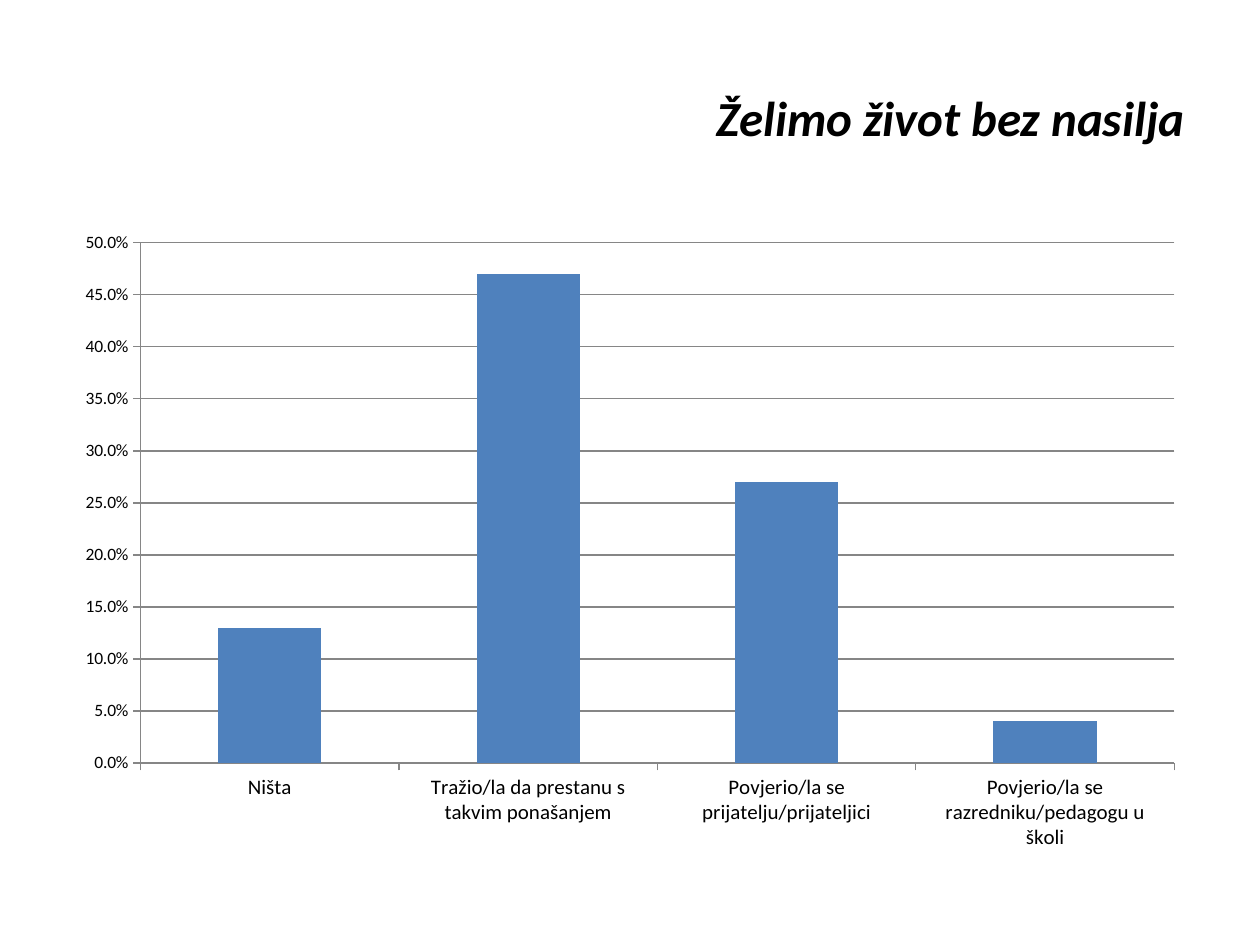
from pptx import Presentation
from pptx.chart.data import CategoryChartData
from pptx.dml.color import RGBColor
from pptx.enum.chart import XL_CHART_TYPE, XL_TICK_MARK
from pptx.enum.text import MSO_ANCHOR, PP_ALIGN
from pptx.util import Cm, Pt

FONT = "Calibri"
BLACK, GREY, BLUE = "000000", "868686", "4F81BD"
RESPONSES = {
    "Ništa": 0.13,
    "Tražio/la da prestanu s takvim ponašanjem": 0.47,
    "Povjerio/la se prijatelju/prijateljici": 0.27,
    "Povjerio/la se razredniku/pedagogu u školi": 0.04,
}


def color(hex_code):
    return RGBColor.from_string(hex_code)


def style_font(font, size):
    font.name = FONT
    font.size = Pt(size)
    font.color.rgb = color(BLACK)


def style_line(line):
    line.color.rgb = color(GREY)
    line.width = Pt(0.75)


def add_title(slide, text):
    heading = slide.shapes.title
    heading.left, heading.top = Cm(1.27), Cm(0.76)
    heading.width, heading.height = Cm(22.86), Cm(3.18)
    frame = heading.text_frame
    frame.vertical_anchor = MSO_ANCHOR.MIDDLE
    paragraph = frame.paragraphs[0]
    paragraph.alignment = PP_ALIGN.RIGHT
    run = paragraph.add_run()
    run.text = text
    style_font(run.font, 28)
    run.font.bold = run.font.italic = True


def style_axis(axis, size):
    style_font(axis.tick_labels.font, size)
    style_line(axis.format.line)
    axis.major_tick_mark = XL_TICK_MARK.OUTSIDE
    axis.minor_tick_mark = XL_TICK_MARK.NONE


def add_response_chart(slide, responses):
    data = CategoryChartData(number_format="0.0%")
    data.categories = list(responses)
    data.add_series("Series 1", list(responses.values()))
    chart = slide.shapes.add_chart(
        XL_CHART_TYPE.COLUMN_CLUSTERED,
        Cm(1.27), Cm(4.45), Cm(22.86), Cm(12.57), data,
    ).chart
    style_font(chart.font, 10)
    chart.has_legend = False
    chart.has_title = False

    # Columns
    columns = chart.plots[0]
    columns.gap_width = 150
    columns.vary_by_categories = False
    fill = columns.series[0].format.fill
    fill.solid()
    fill.fore_color.rgb = color(BLUE)

    # Axes and gridlines
    style_axis(chart.category_axis, 12)
    shares = chart.value_axis
    style_axis(shares, 10)
    shares.minimum_scale, shares.maximum_scale = 0, 0.5
    shares.major_unit = 0.05
    shares.tick_labels.number_format = "0.0%"
    shares.tick_labels.number_format_is_linked = False
    shares.has_major_gridlines = True
    style_line(shares.major_gridlines.format.line)


def main():
    deck = Presentation()
    deck.slide_width, deck.slide_height = Cm(25.4), Cm(19.05)
    slide = deck.slides.add_slide(deck.slide_layouts[5])
    add_title(slide, "Želimo život bez nasilja")
    add_response_chart(slide, RESPONSES)
    deck.save("out.pptx")


if __name__ == "__main__":
    main()
